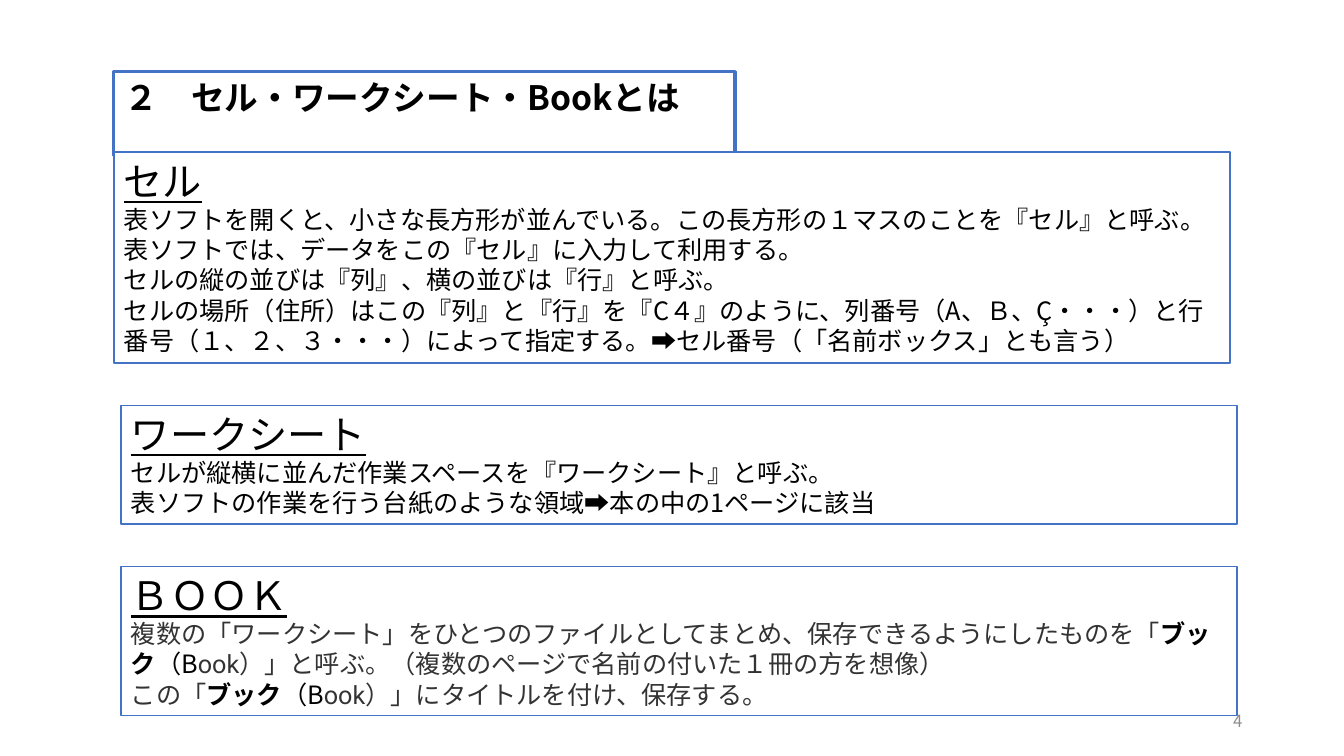
from dataclasses import dataclass

from lxml.etree import SubElement
from pptx import Presentation
from pptx.dml.color import RGBColor
from pptx.enum.text import MSO_ANCHOR as Anchor, MSO_AUTO_SIZE as Fit, PP_ALIGN as Align
from pptx.oxml.ns import qn
from pptx.util import Inches, Pt

SANS, LATIN = "Noto Sans CJK JP", "Roboto"
BLACK, DARK, GREY, BLUE, WHITE = "000000", "333333", "8C8C8C", "4472C4", "FFFFFF"


@dataclass(frozen=True)
class Span:
    text: str
    face: str = LATIN
    color: str = DARK
    bold: bool = False


@dataclass(frozen=True)
class Panel:
    left: float
    top: float
    height: float
    head: str
    lines: tuple[str | tuple[Span, ...], ...]


BOOK = (Span("ブック", color=BLACK, bold=True), Span("（B", SANS, BLACK))

PANELS = (
    Panel(1.13, 1.51, 2.09, "セル", (
        "表ソフトを開くと、小さな長方形が並んでいる。この長方形の１マスのことを『セル』と呼ぶ。",
        "表ソフトでは、データをこの『セル』に入力して利用する。",
        "セルの縦の並びは『列』、横の並びは『行』と呼ぶ。",
        "セルの場所（住所）はこの『列』と『行』を『C４』のように、列番号（A、Ｂ、Ç・・・）と"
        "行番号（１、２、３・・・）によって指定する。➡セル番号（「名前ボックス」とも言う）",
    )),
    Panel(1.2, 4.02, 1.18, "ワークシート", (
        "セルが縦横に並んだ作業スペースを『ワークシート』と呼ぶ。",
        "表ソフトの作業を行う台紙のような領域➡本の中の1ページに該当",
    )),
    Panel(1.2, 5.62, 1.48, "ＢＯＯＫ", (
        (Span("複数の「ワークシート」をひとつのファイルとしてまとめ、保存できるようにしたものを「"),
         *BOOK, Span("ook）」と呼ぶ。（複数のページで名前の付いた１冊の方を想像）")),
        (Span("この「"), *BOOK, Span("ook）」にタイトルを付け、保存する。")),
    )),
)


def paint(target, color: str) -> None:
    """Fill a shape, line or font with one solid colour."""
    fill = target if hasattr(target, "solid") else target.fill
    fill.solid()
    fill.fore_color.rgb = RGBColor.from_string(color)


def style(font, color: str, face: str = SANS, size: float | None = None,
          bold: bool = False, line: bool = False) -> None:
    font.name = face
    font.bold, font.underline = bold, line
    if size:
        font.size = Pt(size)
    paint(font, color)
    latin = font._element.find(qn("a:latin"))
    east = SubElement(font._element, qn("a:ea"), typeface=SANS)
    latin.addnext(east)


def place(shape, left: float, top: float, width: float, height: float) -> None:
    shape.left, shape.top = Inches(left), Inches(top)
    shape.width, shape.height = Inches(width), Inches(height)


def border(shape, width: float) -> None:
    paint(shape, WHITE)
    paint(shape.line, BLUE)
    shape.line.width = Pt(width)


def draw_title(slide) -> None:
    title = slide.shapes.title
    place(title, 1.13, 0.71, 6.16, 0.5)
    border(title, 2.25)
    frame = title.text_frame
    frame.text = "２\u3000セル・ワークシート・Bookとは".replace("\u3000", "　")
    frame.word_wrap, frame.auto_size = True, Fit.SHAPE_TO_FIT_TEXT
    frame.vertical_anchor = Anchor.TOP
    para = frame.paragraphs[0]
    para.alignment = Align.LEFT
    style(para.font, BLACK, size=24, bold=True)


def draw_panel(slide, panel: Panel) -> None:
    area = [Inches(n) for n in (panel.left, panel.top, 11.07, panel.height)]
    box = slide.shapes.add_textbox(*area)
    border(box, 1)
    frame = box.text_frame
    frame.word_wrap, frame.auto_size = True, Fit.SHAPE_TO_FIT_TEXT
    head = frame.paragraphs[0]
    head.text = panel.head
    style(head.font, BLACK, size=28, line=True)
    for line in panel.lines:
        para = frame.add_paragraph()
        if isinstance(line, str):
            para.text = line
            style(para.font, BLACK, size=18)
            continue
        para.font.size = Pt(18)
        for span in line:
            run = para.add_run()
            run.text = span.text
            style(run.font, span.color, span.face, bold=span.bold)


def draw_number(slide) -> None:
    box = slide.shapes.add_textbox(*map(Inches, (9.42, 6.95, 3, 0.4)))
    frame = box.text_frame
    frame.word_wrap = True
    frame.vertical_anchor = Anchor.MIDDLE
    para = frame.paragraphs[0]
    para.text = "4"
    para.alignment = Align.RIGHT
    style(para.font, GREY, size=12)


def main() -> None:
    deck = Presentation()
    deck.slide_width, deck.slide_height = Inches(13.33), Inches(7.5)
    slide = deck.slides.add_slide(deck.slide_layouts[5])
    draw_title(slide)
    for panel in PANELS:
        draw_panel(slide, panel)
    draw_number(slide)
    deck.save("out.pptx")


if __name__ == "__main__":
    main()
